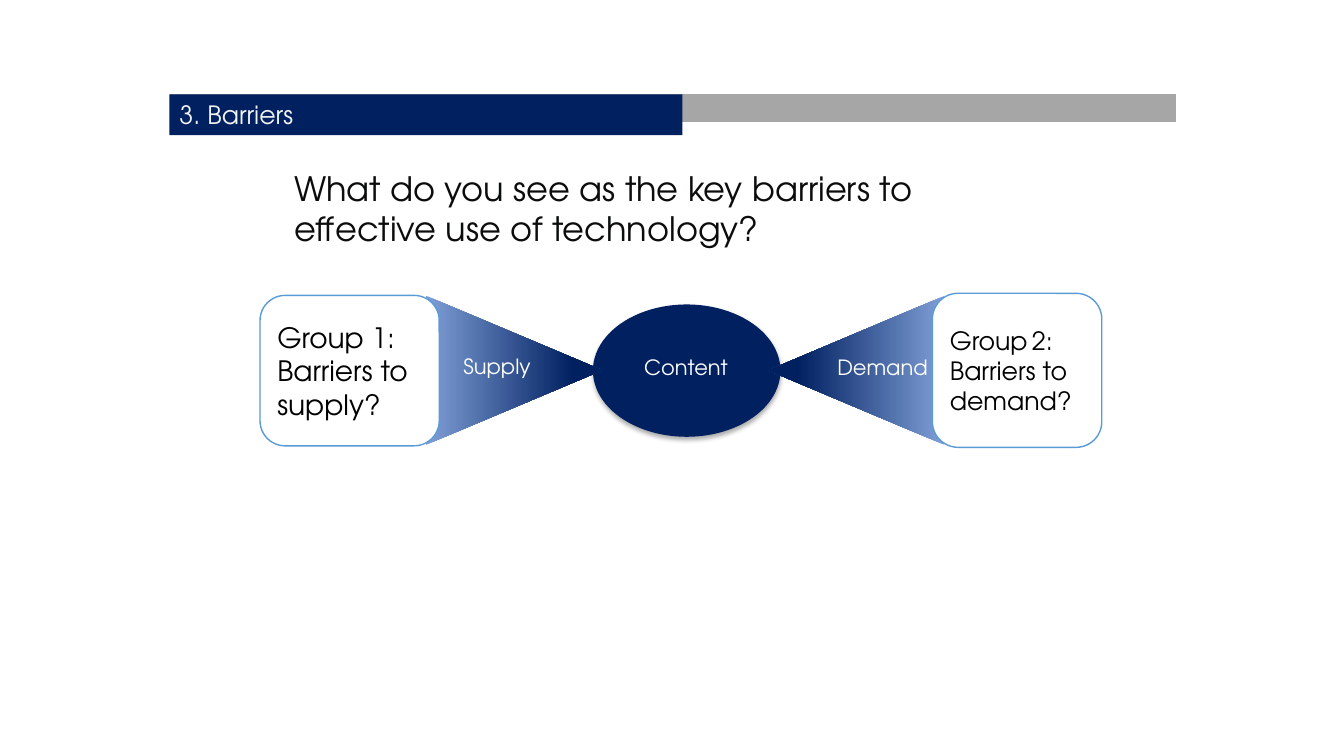
"""Build the barriers slide: supply and demand feeding into content."""
from lxml import etree
from pptx import Presentation
from pptx.dml.color import RGBColor
from pptx.enum.shapes import MSO_SHAPE
from pptx.enum.text import MSO_ANCHOR, MSO_AUTO_SIZE, PP_ALIGN
from pptx.util import Pt

NAVY = RGBColor(0x00, 0x20, 0x60)
PALE = RGBColor(0x80, 0x9F, 0xD7)
BLUE = RGBColor(0x5B, 0x9B, 0xD5)
GRAY = RGBColor(0xA6, 0xA6, 0xA6)
WHITE = RGBColor(0xFF, 0xFF, 0xFF)
SMOKE = RGBColor(0xF2, 0xF2, 0xF2)
BLACK = RGBColor(0x00, 0x00, 0x00)
INK = RGBColor(0x0B, 0x0C, 0x0C)
FONT = "TeX Gyre Adventor"
SHADE = """<a:outerShdw xmlns:a="http://schemas.openxmlformats.org/drawingml/2006/main"
  blurRad="44450" dist="27940" dir="5400000" algn="ctr" rotWithShape="0">
  <a:srgbClr val="000000"><a:alpha val="32000"/></a:srgbClr></a:outerShdw>"""

deck = Presentation()
deck.slide_width, deck.slide_height = Pt(960), Pt(540)
slide = deck.slides.add_slide(deck.slide_layouts[5])


def write(shape, *parts, size=18, color=BLACK, anchor=MSO_ANCHOR.MIDDLE):
    frame = shape.text_frame
    frame.word_wrap = True
    frame.auto_size = MSO_AUTO_SIZE.NONE
    frame.vertical_anchor = anchor
    para = frame.paragraphs[0]
    para.alignment = PP_ALIGN.LEFT
    for text, scale in parts:
        run = para.add_run()
        run.text = text
        run.font.name = FONT
        run.font.size = Pt(size * scale)
        run.font.color.rgb = color


def draw(kind, box, fill=None, line=None, width=1):
    shape = slide.shapes.add_shape(kind, *map(Pt, box))
    shape.shadow.inherit = False
    if fill is None:
        shape.fill.background()
    else:
        shape.fill.solid()
        shape.fill.fore_color.rgb = fill
    if line is None:
        shape.line.fill.background()
    else:
        shape.line.color.rgb = line
        shape.line.width = Pt(width)
    return shape


hub = draw(MSO_SHAPE.OVAL, (423.5, 217.5, 134, 94.5), NAVY)
hub.element.spPr[-1].append(etree.fromstring(SHADE))

for left, turn in ((314, 90), (558.5, 270)):
    cone = draw(MSO_SHAPE.ISOSCELES_TRIANGLE, (left, 201.5, 106.5, 126))
    cone.rotation = turn
    cone.fill.gradient()
    cone.fill.gradient_angle = 90
    for stop, (place, color) in zip(cone.fill.gradient_stops, ((0, PALE), (0.84, NAVY))):
        stop.position = place
        stop.color.rgb = color

groups = (
    ((666, 209.5, 121, 110), 18, (("Group", 1), (" ", 0.61), ("2: Barriers to demand?", 1))),
    ((185.75, 211, 128, 107.5), 20, (("Group 1: Barriers to supply?", 1),)),
)
for box, size, parts in groups:
    card = draw(MSO_SHAPE.ROUNDED_RECTANGLE, box, WHITE, BLUE)
    write(card, *parts, size=size)

for text, left, top in (("Supply", 322.5, 246), ("Demand", 589.5, 247), ("Content", 451.5, 247)):
    label = draw(MSO_SHAPE.ROUNDED_RECTANGLE, (left, top, 128, 31))
    write(label, (text, 1), size=15, color=WHITE)

draw(MSO_SHAPE.RECTANGLE, (121, 66.25, 720, 21.5), GRAY, WHITE, 1.5)

ask = slide.shapes.add_textbox(Pt(203), Pt(116.5), Pt(538.5), Pt(65.5))
write(ask, ("What do you see as the key barriers to effective use of technology?", 1),
      size=24, color=INK, anchor=MSO_ANCHOR.TOP)

title = slide.shapes.title
title.left, title.top, title.width, title.height = map(Pt, (121, 67.5, 366.5, 29))
title.fill.solid()
title.fill.fore_color.rgb = NAVY
write(title, ("3. Barriers", 1), color=SMOKE, anchor=MSO_ANCHOR.TOP)
title.element.getparent().append(title.element)

deck.save("out.pptx")
